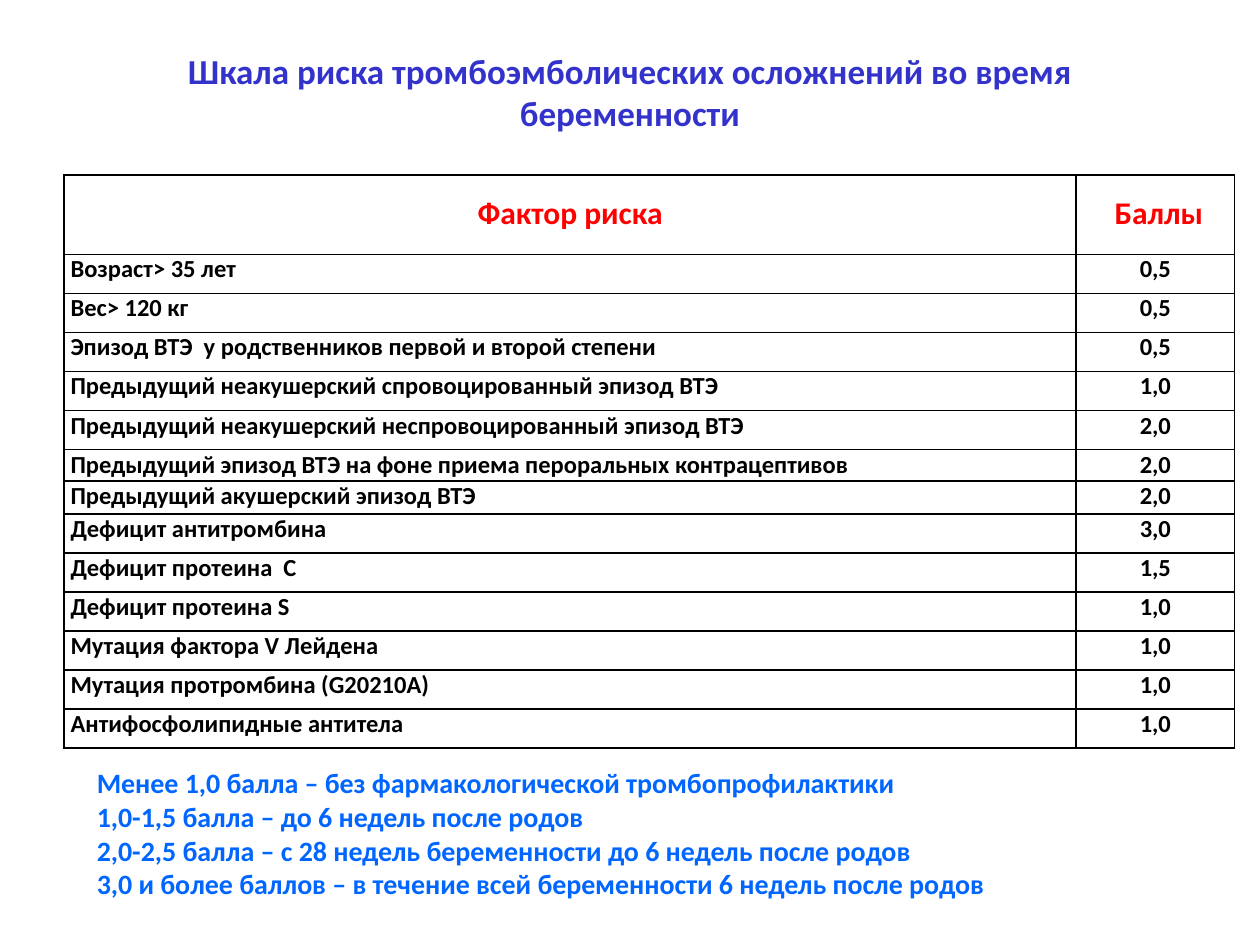
from lxml import etree
from pptx import Presentation
from pptx.dml.color import RGBColor
from pptx.enum import text
from pptx.oxml.ns import qn
from pptx.util import Inches, Pt

FACTORS = [
    ("Возраст> 35 лет", "0,5"),
    ("Вес> 120 кг", "0,5"),
    ("Эпизод ВТЭ  у родственников первой и второй степени", "0,5"),
    ("Предыдущий неакушерский спровоцированный эпизод ВТЭ", "1,0"),
    ("Предыдущий неакушерский неспровоцированный эпизод ВТЭ", "2,0"),
    ("Предыдущий эпизод ВТЭ на фоне приема пероральных контрацептивов", "2,0"),
    ("Предыдущий акушерский эпизод ВТЭ", "2,0"),
    ("Дефицит антитромбина", "3,0"),
    ("Дефицит протеина  C", "1,5"),
    ("Дефицит протеина S", "1,0"),
    ("Мутация фактора V Лейдена", "1,0"),
    ("Мутация протромбина (G20210A)", "1,0"),
    ("Антифосфолипидные антитела", "1,0"),
]
ADVICE = [
    "Менее 1,0 балла – без фармакологической тромбопрофилактики",
    "1,0-1,5 балла – до 6 недель после родов",
    "2,0-2,5 балла – с 28 недель беременности до 6 недель после родов",
    "3,0 и более баллов – в течение всей беременности 6 недель после родов",
]
HEADER = ("Фактор риска", " Баллы")
ROW_HEIGHTS = [0.63] + [0.31] * 5 + [0.25, 0.26] + [0.31] * 6


def style(para, size, color, align=text.PP_ALIGN.LEFT):
    para.alignment = align
    para.font.name = "Calibri"
    para.font.size = Pt(size)
    para.font.bold = True
    para.font.color.rgb = RGBColor.from_string(color)


def add_borders(cell, color="000000", width=1):
    properties = cell._tc.get_or_add_tcPr()
    for index, side in enumerate(("a:lnL", "a:lnR", "a:lnT", "a:lnB")):
        line = etree.Element(qn(side), w=str(Pt(width)))
        fill = etree.SubElement(line, qn("a:solidFill"))
        etree.SubElement(fill, qn("a:srgbClr"), val=color)
        properties.insert(index, line)


deck = Presentation()
deck.slide_width, deck.slide_height = Inches(10), Inches(7.5)
page = deck.slides.add_slide(deck.slide_layouts[5])

title = page.shapes.title
title.left, title.top = Inches(0.5), Inches(0.3)
title.width, title.height = Inches(9), Inches(0.85)
title.text_frame.text = "Шкала риска тромбоэмболических осложнений во время беременности"
title.text_frame.vertical_anchor = text.MSO_ANCHOR.MIDDLE
style(title.text_frame.paragraphs[0], 20, "3333CC", text.PP_ALIGN.CENTER)

rows = [HEADER] + FACTORS
table = page.shapes.add_table(
    len(rows), 2, Inches(0.51), Inches(1.39), Inches(9.29), Inches(sum(ROW_HEIGHTS))
).table
table.horz_banding = False
table.columns[0].width, table.columns[1].width = Inches(8.03), Inches(1.26)
for row_index, values in enumerate(rows):
    table.rows[row_index].height = Inches(ROW_HEIGHTS[row_index])
    for column_index, value in enumerate(values):
        cell = table.cell(row_index, column_index)
        cell.text = value
        cell.margin_left = cell.margin_right = Inches(0.05)
        cell.margin_top = cell.margin_bottom = 0
        cell.fill.background()
        add_borders(cell)
        para = cell.text_frame.paragraphs[0]
        if row_index == 0:
            style(para, 18, "FF0000", text.PP_ALIGN.CENTER)
            para.line_spacing = 1.5
        else:
            align = text.PP_ALIGN.CENTER if column_index else text.PP_ALIGN.LEFT
            style(para, 14, "000000", align)

advice = page.shapes.add_textbox(Inches(0.67), Inches(6.03), Inches(8.9), Inches(1.18))
advice.text_frame.word_wrap = True
advice.text_frame.auto_size = text.MSO_AUTO_SIZE.SHAPE_TO_FIT_TEXT
advice.text_frame.text = "\n".join(ADVICE)
for para in advice.text_frame.paragraphs:
    style(para, 16, "0066FF")

deck.save("out.pptx")
